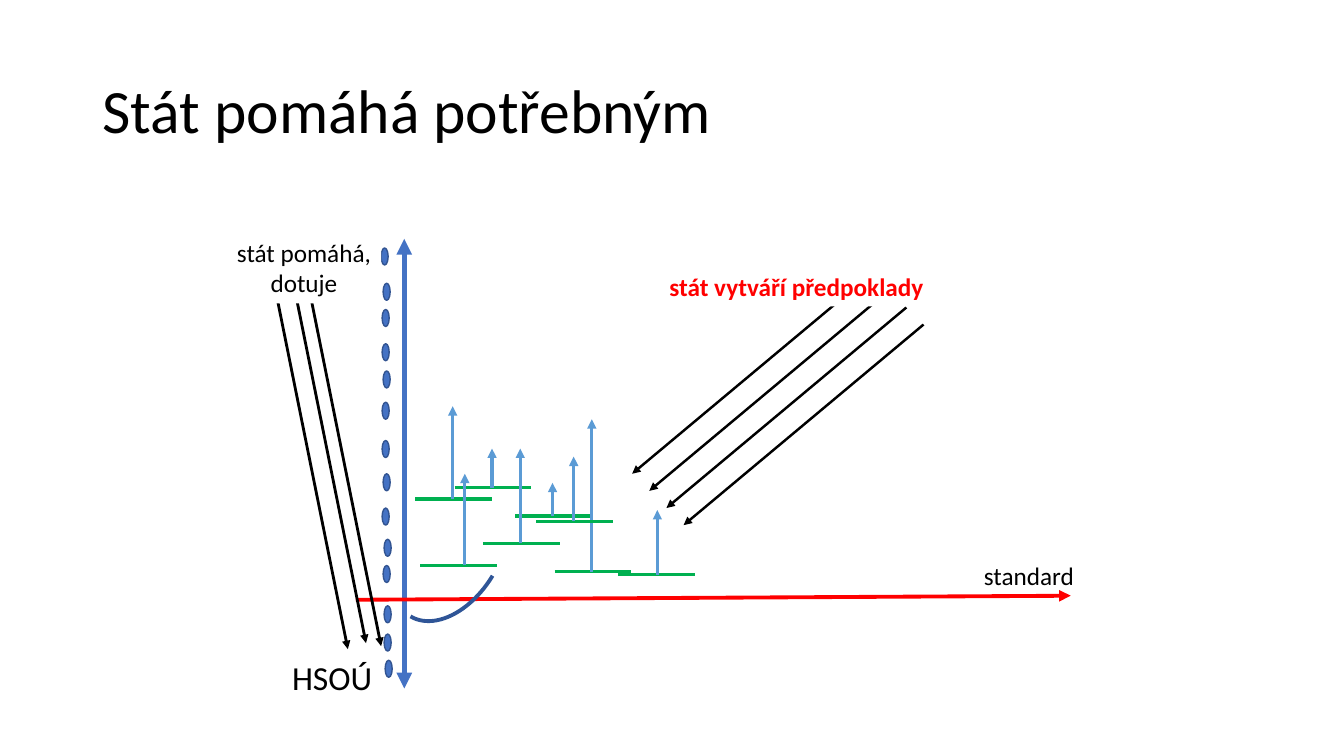
from lxml import etree
from pptx import Presentation
from pptx.dml.color import RGBColor
from pptx.enum.shapes import MSO_CONNECTOR, MSO_SHAPE
from pptx.enum.text import MSO_ANCHOR, PP_ALIGN
from pptx.oxml.ns import qn
from pptx.util import Emu, Pt

EMU_PER_PX = 9144
FONT = "Calibri"
BLACK = RGBColor(0x00, 0x00, 0x00)
WHITE = RGBColor(0xFF, 0xFF, 0xFF)
RED = RGBColor(0xFF, 0x00, 0x00)
GREEN = RGBColor(0x00, 0xB0, 0x50)
BLUE = RGBColor(0x44, 0x72, 0xC4)
DARK_BLUE = RGBColor(0x32, 0x54, 0x91)
ARC_BLUE = RGBColor(0x2F, 0x55, 0x97)
LIGHT_BLUE = RGBColor(0x5B, 0x9B, 0xD5)
STRAIGHT = MSO_CONNECTOR.STRAIGHT
ELLIPSE, ARC = MSO_SHAPE.OVAL, MSO_SHAPE.ARC
TOP, MIDDLE = MSO_ANCHOR.TOP, MSO_ANCHOR.MIDDLE
LEFT, CENTER, RIGHT = PP_ALIGN.LEFT, PP_ALIGN.CENTER, PP_ALIGN.RIGHT

DOTS = [
    (378, 246), (380, 281), (379, 307), (379, 341), (380, 368),
    (379, 399), (379, 437), (380, 470), (379, 504), (381, 535),
    (380, 561), (381, 601), (381, 629), (382, 655),
]
HELP_STARTS = [(266, 252), (284, 246), (299, 249)]
LEVELS = [
    (451, 484, 488, 445), (412, 495, 449, 403), (511, 512, 548, 479),
    (417, 561, 461, 470), (613, 570, 652, 506), (550, 567, 587, 416),
    (479, 539, 516, 445), (532, 517, 569, 453),
]
LEVEL_WIDTH = 76


class Diagram:
    """Draws styled elements on one slide, with lengths in px."""

    def __init__(self, slide):
        self.slide = slide

    def px(self, *lengths):
        return [Emu(length * EMU_PER_PX) for length in lengths]

    def line(self, start, end, color, width, head=False, tail=False):
        connector = self.slide.shapes.add_connector(STRAIGHT, *self.px(*start, *end))
        connector.line.color.rgb = color
        connector.line.width = Pt(width)
        outline = connector.line._get_or_add_ln()
        for tag, shown in (("a:headEnd", head), ("a:tailEnd", tail)):
            if shown:
                etree.SubElement(outline, qn(tag), type="triangle")
        etree.SubElement(connector._element.spPr, qn("a:effectLst"))

    def dot(self, left, top):
        shape = self.slide.shapes.add_shape(ELLIPSE, *self.px(left, top, 7, 17))
        shape.shadow.inherit = False
        shape.fill.solid()
        shape.fill.fore_color.rgb = BLUE
        shape.line.color.rgb = DARK_BLUE
        shape.line.width = Pt(1)

    def arc(self, box, rotation):
        shape = self.slide.shapes.add_shape(ARC, *self.px(*box))
        shape.shadow.inherit = False
        shape.rotation = rotation
        shape.fill.background()
        shape.line.color.rgb = ARC_BLUE
        shape.line.width = Pt(2.75)

    def text(self, box, lines, size=18, color=BLACK, bold=False, align=LEFT,
             anchor=TOP, fill=None, spacing=1.0):
        shape = self.slide.shapes.add_textbox(*self.px(*box))
        if fill is not None:
            shape.fill.solid()
            shape.fill.fore_color.rgb = fill
        frame = shape.text_frame
        frame.word_wrap = True
        frame.vertical_anchor = anchor
        for index, content in enumerate(lines):
            paragraph = frame.add_paragraph() if index else frame.paragraphs[0]
            paragraph.alignment = align
            paragraph.line_spacing = spacing
            run = paragraph.add_run()
            run.text = content
            run.font.name = FONT
            run.font.size = Pt(size)
            run.font.bold = bold
            run.font.color.rgb = color


def main():
    presentation = Presentation()
    presentation.slide_width = Emu(1333 * EMU_PER_PX)
    presentation.slide_height = Emu(750 * EMU_PER_PX)
    diagram = Diagram(presentation.slides.add_slide(presentation.slide_layouts[6]))

    diagram.text((92, 40, 1150, 145), ["Stát pomáhá potřebným"], size=44,
                 anchor=MIDDLE, spacing=0.9)
    diagram.line((401, 237), (401, 683), BLUE, 3.75, head=True, tail=True)
    diagram.line((353, 595), (1062, 591), RED, 2.75, tail=True)
    for left, top in DOTS:
        diagram.dot(left, top)
    diagram.arc((370, 497, 153, 98), 121)

    for x, y in HELP_STARTS:
        diagram.line((x, y), (x + 79, y + 392), BLACK, 2, tail=True)
    for left, level, x, tip in LEVELS:
        diagram.line((left, level), (left + LEVEL_WIDTH, level), GREEN, 2.25)
        diagram.line((x, level), (x, tip), LIGHT_BLUE, 2.25, tail=True)
    for step in range(4):
        x, y = 865 + 17 * step, 271 + 17 * step
        diagram.line((x, y), (x - 238, y + 199), BLACK, 1.75, tail=True)

    diagram.text((225, 230, 153, 71), ["stát pomáhá,", "dotuje"], align=CENTER, fill=WHITE)
    diagram.text((592, 264, 334, 40), ["stát vytváří předpoklady"], color=RED,
                 bold=True, align=RIGHT, fill=WHITE)
    diagram.text((247, 647, 132, 50), ["HSOÚ"], size=24, align=RIGHT)
    diagram.text((966, 551, 114, 40), ["standard"])
    presentation.save("out.pptx")


if __name__ == "__main__":
    main()
